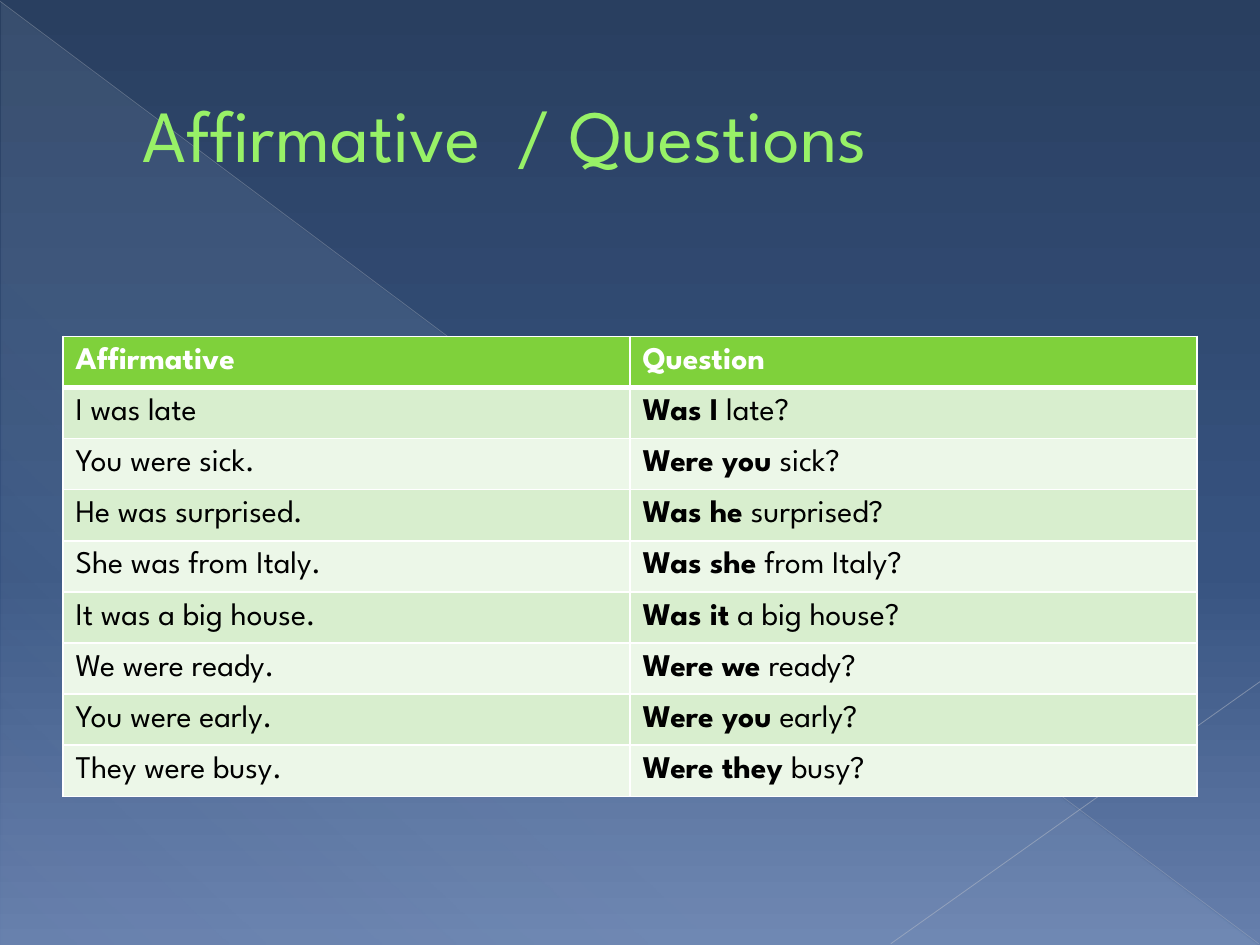
from lxml import etree
from pptx import Presentation
from pptx.dml.color import RGBColor
from pptx.enum.shapes import MSO_CONNECTOR, MSO_SHAPE
from pptx.enum.text import MSO_ANCHOR, MSO_AUTO_SIZE, PP_ALIGN
from pptx.oxml.ns import qn
from pptx.util import Inches, Pt

STRAIGHT = MSO_CONNECTOR.STRAIGHT
RIGHT_TRIANGLE = MSO_SHAPE.RIGHT_TRIANGLE
MIDDLE = MSO_ANCHOR.MIDDLE
NO_AUTOFIT = MSO_AUTO_SIZE.NONE
LEFT = PP_ALIGN.LEFT

THEME = {
    "font": "League Spartan",
    "title_size": Pt(42),
    "table_size": Pt(18),
    "title": "98F167",
    "title_outline": "589129",
    "header": "7FD13B",
    "bands": ["D8EECE", "ECF7E8"],
    "white": "FFFFFF",
    "black": "000000",
    "background": [(0, "293F60", 100), (60, "375380", 100), (100, "667FAC", 100)],
    "triangle": [(0, "D6ECFF", 10), (70, "D6ECFF", 8), (100, "D6ECFF", 1)],
    "lines": ["B7BCC5", "BFC3CB"],
}


def set_gradient(element, stops, angle):
    grad = element.find(".//" + qn("a:gradFill"))
    for child in list(grad):
        grad.remove(child)
    stop_list = etree.SubElement(grad, qn("a:gsLst"))
    for position, color, alpha in stops:
        gs = etree.SubElement(stop_list, qn("a:gs"), pos=str(position * 1000))
        clr = etree.SubElement(gs, qn("a:srgbClr"), val=color)
        etree.SubElement(clr, qn("a:alpha"), val=str(alpha * 1000))
    etree.SubElement(grad, qn("a:lin"), ang=str(angle * 60000), scaled="0")


def add_outline(parent, index, tag, color, width):
    ln = etree.Element(qn(tag), w=str(Pt(width)))
    fill = etree.SubElement(ln, qn("a:solidFill"))
    etree.SubElement(fill, qn("a:srgbClr"), val=color)
    parent.insert(index, ln)


prs = Presentation()
prs.slide_width, prs.slide_height = Inches(10), Inches(7.5)
s = prs.slides.add_slide(prs.slide_layouts[5])

s.background.fill.gradient()
set_gradient(s.element, THEME["background"], 90)

sp = s.shapes.add_shape(RIGHT_TRIANGLE, Inches(0.01), Inches(0.02), Inches(9.98), Inches(7.48))
sp.shadow.inherit = False
sp.line.fill.background()
sp.fill.gradient()
set_gradient(sp.element, THEME["triangle"], 133)

diagonals = [
    ((0, 0.01, 9.99, 7.49), 0.39, 35),
    ((10, 5.41, 7.07, 7.49), 0.47, 45),
]
for (points, width, alpha), color in zip(diagonals, THEME["lines"]):
    line = s.shapes.add_connector(STRAIGHT, *[Inches(v) for v in points])
    line.line.width = Pt(width)
    line.line.color.rgb = RGBColor.from_string(color)
    clr = line.element.find(".//" + qn("a:srgbClr"))
    etree.SubElement(clr, qn("a:alpha"), val=str(alpha * 1000))
    etree.SubElement(line.element.spPr, qn("a:effectLst"))

title = s.shapes.title
title.element.getparent().append(title.element)
title.left, title.top, title.width, title.height = [Inches(v) for v in (0.5, 0.29, 9, 1.53)]
tf = title.text_frame
for name, value in {"word_wrap": True, "auto_size": NO_AUTOFIT, "vertical_anchor": MIDDLE}.items():
    setattr(tf, name, value)
p = tf.paragraphs[0]
p.alignment = LEFT
pPr = p._p.get_or_add_pPr()
pPr.set("marL", str(Inches(0.53)))
pPr.set("indent", "0")
r = p.add_run()
r.text = "Affirmative  / Questions"
for name, value in {"name": THEME["font"], "size": THEME["title_size"], "bold": False}.items():
    setattr(r.font, name, value)
r.font.color.rgb = RGBColor.from_string(THEME["title"])
add_outline(r._r.get_or_add_rPr(), 0, "a:ln", THEME["title_outline"], 0.5)

rows = [
    ("Affirmative", "Question", ""),
    ("I was late", "Was I", " late?"),
    ("You were sick.", "Were you", " sick?"),
    ("He was surprised.", "Was he", " surprised?"),
    ("She was from Italy.", "Was she", " from Italy?"),
    ("It was a big house.", "Was it", " a big house?"),
    ("We were ready.", "Were we", " ready?"),
    ("You were early.", "Were you", " early?"),
    ("They were busy.", "Were they ", "busy?"),
]
table = s.shapes.add_table(len(rows), 2, Inches(0.5), Inches(2.67), Inches(9), Inches(3.65)).table

for i, (affirmative, question, ending) in enumerate(rows):
    header = i == 0
    fill = THEME["header"] if header else THEME["bands"][(i - 1) % 2]
    color = THEME["white"] if header else THEME["black"]
    borders = {"L": 1, "R": 1, "T": 3 if i == 1 else 1, "B": 3 if header else 1}
    contents = [[(affirmative, header)], [(question, True), (ending, False)]]
    for j, runs in enumerate(contents):
        cell = table.cell(i, j)
        cell.vertical_anchor = MIDDLE
        cell.fill.solid()
        cell.fill.fore_color.rgb = RGBColor.from_string(fill)
        tcPr = cell._tc.get_or_add_tcPr()
        for k, (side, width) in enumerate(borders.items()):
            add_outline(tcPr, k, "a:ln" + side, THEME["white"], width)
        p = cell.text_frame.paragraphs[0]
        for text, bold in runs:
            if text:
                r = p.add_run()
                r.text = text
                for name, value in {"name": THEME["font"], "size": THEME["table_size"], "bold": bold}.items():
                    setattr(r.font, name, value)
                r.font.color.rgb = RGBColor.from_string(color)

prs.save("out.pptx")
